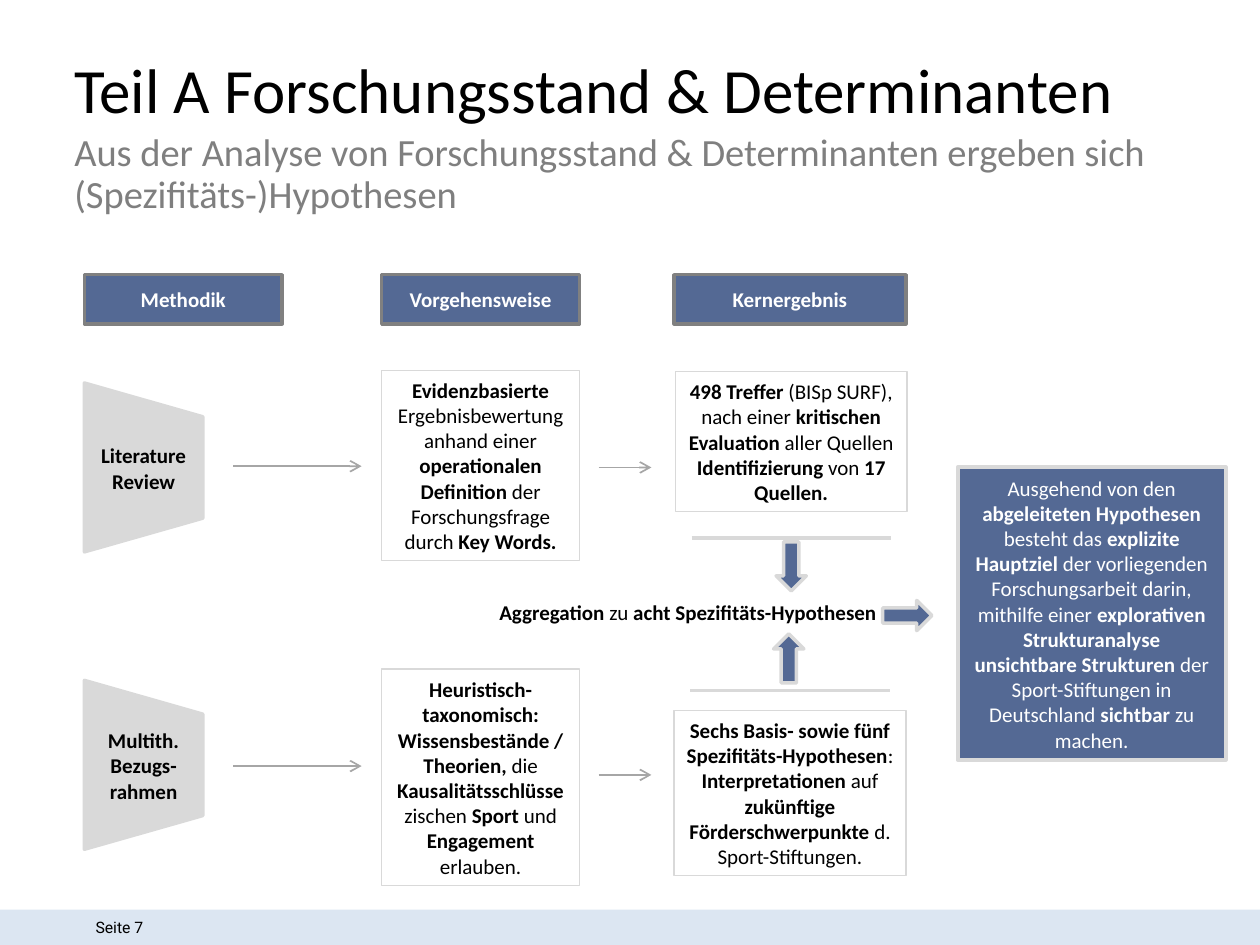
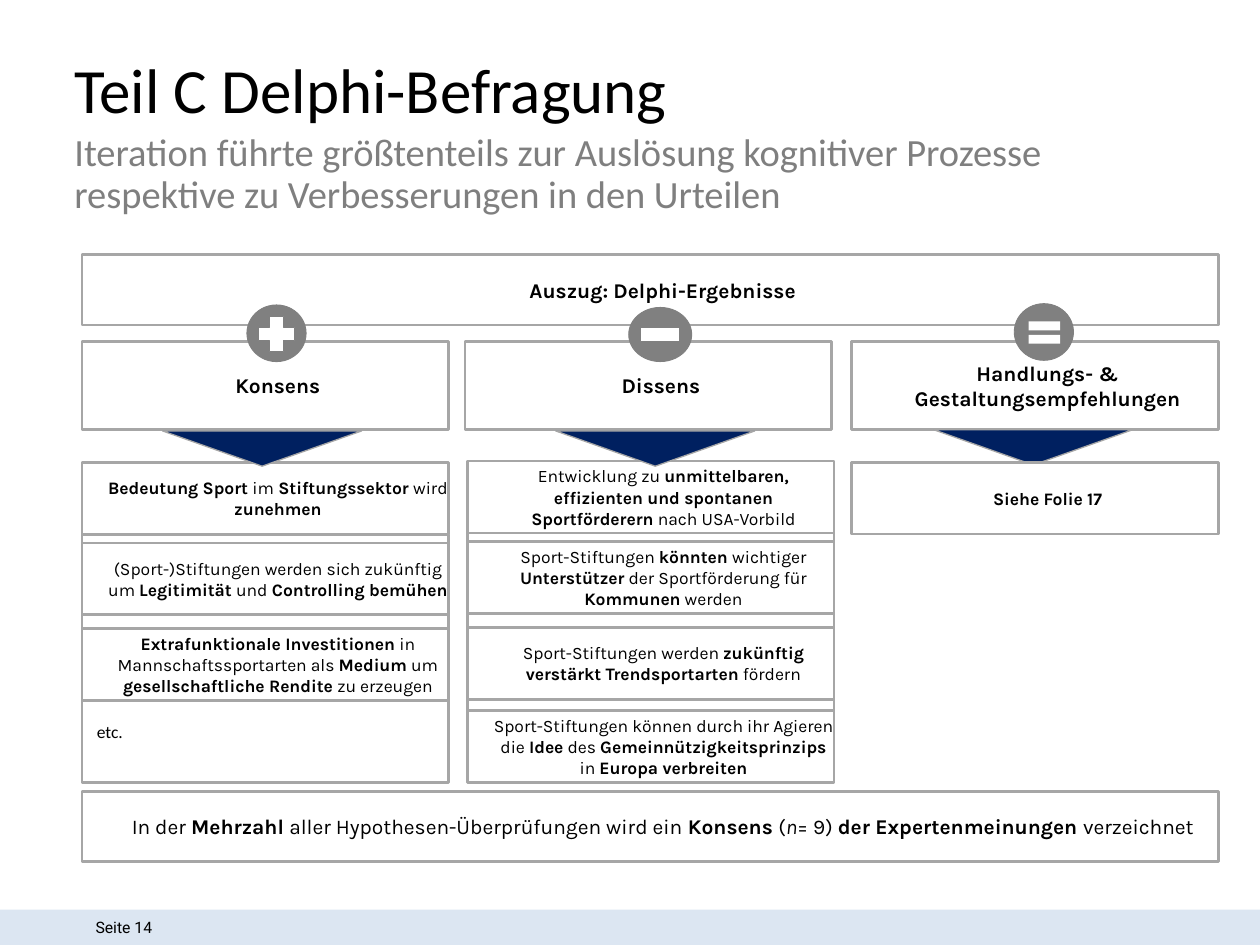
"""Build two slides on research hypotheses and Delphi survey results."""
from lxml.etree import SubElement
from pptx import Presentation
from pptx.dml.color import RGBColor
from pptx.enum.shapes import MSO_CONNECTOR, MSO_SHAPE
from pptx.enum.text import MSO_ANCHOR, MSO_AUTO_SIZE, PP_ALIGN
from pptx.oxml.ns import qn
from pptx.util import Inches, Pt

COLORS = {
    "black": "000000", "white": "FFFFFF", "navy": "002060", "band": "DCE6F2",
    "subtitle": "7F7F7F", "icon": "808080", "border": "A6A6A6", "light": "D9D9D9",
}
COL_W, ROW_H = 2.91, 0.57
ROW_TOPS = (3.67, 4.31, 4.99, 5.65)


def rgb(name):
    return RGBColor.from_string(COLORS[name])


def style_run(r, size, font, color, bold=False, italic=False):
    r.font.size, r.font.name = Pt(size), font
    r.font.color.rgb = rgb(color)
    r.font.bold, r.font.italic = bold, italic


def write(sp, text, size=12, font="Calibri", color="black", align=PP_ALIGN.CENTER,
          insets=(0.1, 0.05), indent=0, anchor=MSO_ANCHOR.MIDDLE):
    """Fill a shape with text where * toggles bold and _ toggles italic."""
    tf = sp.text_frame
    tf.word_wrap, tf.auto_size, tf.vertical_anchor = True, MSO_AUTO_SIZE.NONE, anchor
    tf.margin_left = tf.margin_right = Inches(insets[0])
    tf.margin_top = tf.margin_bottom = Inches(insets[1])
    for i, line in enumerate(text.split("\n")):
        p = tf.add_paragraph() if i else tf.paragraphs[0]
        p.alignment = align
        if indent:
            pPr = p._p.get_or_add_pPr()
            pPr.set("marL", str(Inches(indent)))
            pPr.set("indent", "0")
        for b, bold_part in enumerate(line.split("*")):
            for k, part in enumerate(bold_part.split("_")):
                if part:
                    r = p.add_run()
                    r.text = part
                    style_run(r, size, font, color, b % 2 == 1, k % 2 == 1)


def add_shape(s, kind, x, y, w, h, fill=None, line=None, width=1, alpha=None, rot=0):
    sp = s.shapes.add_shape(kind, Inches(x), Inches(y), Inches(w), Inches(h))
    sp.shadow.inherit = False
    sp.rotation = rot
    if fill:
        sp.fill.solid()
        sp.fill.fore_color.rgb = rgb(fill)
    else:
        sp.fill.background()
    if alpha:
        clr = sp._element.spPr.find(qn("a:solidFill"))[0]
        SubElement(clr, qn("a:alpha"), val=str(alpha * 1000))
    if line:
        sp.line.color.rgb = rgb(line)
        sp.line.width = Pt(width)
    else:
        sp.line.fill.background()
    return sp


def add_label(s, x, y, w, h, text, **fmt):
    write(s.shapes.add_textbox(Inches(x), Inches(y), Inches(w), Inches(h)), text, **fmt)


def add_navy(s, x, y, w, h, line, width=2, kind=MSO_SHAPE.RECTANGLE, rot=0):
    return add_shape(s, kind, x, y, w, h, "navy", line, width, 67, rot)


def add_line(s, x1, x2, y, color, width, arrow=False):
    c = s.shapes.add_connector(MSO_CONNECTOR.STRAIGHT, Inches(x1), Inches(y), Inches(x2), Inches(y))
    c.line.color.rgb = rgb(color)
    c.line.width = Pt(width)
    spPr = c._element.spPr
    if arrow:
        SubElement(spPr.find(qn("a:ln")), qn("a:tailEnd"), type="arrow")
    SubElement(spPr, qn("a:effectLst"))


def add_card(s, x, y, w, h, text="", size=10):
    sp = add_shape(s, MSO_SHAPE.RECTANGLE, x, y, w, h, "white", "border", 1.5)
    if text:
        write(sp, text, size, "Karla", insets=(0, 0), indent=0.2)


def set_heading(sp, y, w, h, text, size, color):
    sp.left, sp.top, sp.width, sp.height = Inches(0.59), Inches(y), Inches(w), Inches(h)
    p = sp.text_frame.paragraphs[0]
    pPr = p._p.get_or_add_pPr()
    pPr.set("marL", "0")
    pPr.set("indent", "0")
    SubElement(pPr, qn("a:buNone"))
    p.line_spacing, p.space_before = 0.9, Pt(0)
    write(sp, text, size, color=color, align=PP_ALIGN.LEFT, insets=(0, 0), anchor=MSO_ANCHOR.TOP)


def new_slide(prs, title, subtitle, number):
    s = prs.slides.add_slide(prs.slide_layouts[1])
    add_shape(s, MSO_SHAPE.RECTANGLE, 0, 7.22, 10, 0.28, "band")
    add_label(s, 0.66, 7.24, 2.05, 0.24, f"Seite {number}", size=9, font="Roboto", align=PP_ALIGN.LEFT)
    set_heading(s.shapes.title, 0.47, 8.9, 0.59, title, 36, "black")
    set_heading(s.placeholders[1], 1.06, 8.74, 0.59, subtitle, 22, "subtitle")
    return s


def build_hypotheses(prs):
    s = new_slide(prs, "Teil A Forschungsstand & Determinanten",
                  "Aus der Analyse von Forschungsstand & Determinanten ergeben sich "
                  "(Spezifitäts-)Hypothesen", 7)
    for x, w, text in ((0.67, 1.57, "Methodik"), (3.03, 1.57, "Vorgehensweise"),
                       (5.35, 1.84, "Kernergebnis")):
        write(add_navy(s, x, 2.18, w, 0.39, "icon"), f"*{text}*", color="white")
    for y, text in ((3.24, "*Literature*\n*Review*"), (5.6, "*Multith.*\n*Bezugs-rahmen*")):
        add_shape(s, MSO_SHAPE.FLOWCHART_MANUAL_OPERATION, 0.47, y, 1.34, 0.94,
                  "light", "light", 2, rot=270)
        add_label(s, 0.67, y + 0.12, 0.94, 0.71, text)
    for x, y, w, h, text in (
        (3.03, 2.94, 1.57, 1.51, "*Evidenzbasierte* Ergebnisbewertung anhand einer *operationalen "
                                 "Definition* der Forschungsfrage durch *Key Words.*"),
        (5.36, 2.95, 1.84, 1.11, "*498 Treffer *(BISp SURF), nach einer *kritischen Evaluation *aller "
                                 "Quellen *Identifizierung *von* 17 Quellen.*"),
        (3.03, 5.31, 1.57, 1.72, "*Heuristisch-taxonomisch: Wissensbestände / Theorien, *die* "
                                 "Kausalitätsschlüsse *zischen* Sport *und* Engagement *erlauben."),
        (5.35, 5.64, 1.84, 1.31, "*Sechs Basis- sowie fünf Spezifitäts-Hypothesen*:\n*Interpretationen *auf* "
                                 "zukünftige Förderschwerpunkte *d. Sport-Stiftungen."),
    ):
        write(add_shape(s, MSO_SHAPE.RECTANGLE, x, y, w, h, line="light", width=0.75), text)
    for x, y in ((5.49, 4.27), (5.48, 5.48)):
        add_line(s, x, x + 1.58, y, "light", 2.25)
    add_label(s, 3.82, 4.71, 3.28, 0.3, "*Aggregation *zu* acht Spezifitäts-Hypothesen*")
    for x, y, rot in ((6.16, 4.3, 0), (6.14, 5.03, 180), (7.08, 4.69, 270)):
        add_navy(s, x, y, 0.24, 0.39, "light", kind=MSO_SHAPE.DOWN_ARROW, rot=rot)
    write(add_navy(s, 7.6, 3.71, 2.13, 2.32, "light", 2.25),
          "Ausgehend von den *abgeleiteten Hypothesen *besteht das *explizite Hauptziel *der vorliegenden "
          "Forschungsarbeit darin, mithilfe einer *explorativen Strukturanalyse unsichtbare Strukturen *der "
          "Sport-Stiftungen in Deutschland* sichtbar *zu machen.", color="white")
    for x1, x2, y in ((1.85, 2.87, 3.7), (1.85, 2.87, 6.08), (4.75, 5.17, 3.71), (4.75, 5.17, 6.15)):
        add_line(s, x1, x2, y, "border", 1, arrow=True)


def add_icons(s):
    for x, y, w, h in ((1.96, 2.42, 0.47, 0.45), (4.99, 2.44, 0.5, 0.43), (8.05, 2.41, 0.47, 0.45)):
        add_shape(s, MSO_SHAPE.OVAL, x, y, w, h, "icon", "icon", 0.5)
    plus = add_shape(s, MSO_SHAPE.CROSS, 2.05, 2.51, 0.29, 0.28, "white", "icon", 0.5)
    plus.adjustments[0] = 0.31
    add_shape(s, MSO_SHAPE.RECTANGLE, 5.08, 2.6, 0.31, 0.11, "white", "icon", 0.5)
    add_shape(s, MSO_SHAPE.MATH_EQUAL, 8.12, 2.49, 0.34, 0.3, "white")


def build_delphi(prs):
    s = new_slide(prs, "Teil C Delphi-Befragung",
                  "Iteration führte größtenteils zur Auslösung kognitiver Prozesse "
                  "respektive zu Verbesserungen in den Urteilen", 14)
    add_card(s, 0.65, 2.02, 9.02, 0.56, "*Auszug: Delphi-Ergebnisse*", 12)
    for x, text in ((0.65, "Konsens"), (3.69, "Dissens"), (6.76, "Handlungs- & Gestaltungsempfehlungen")):
        add_card(s, x, 2.71, COL_W, 0.7, f"*{text}*", 12)
    add_icons(s)
    consensus = (
        "*Bedeutung Sport *im* Stiftungssektor *wird *zunehmen*",
        "(Sport-)Stiftungen werden sich zukünftig um *Legitimität *und* Controlling bemühen*",
        "*Extrafunktionale Investitionen *in Mannschaftssportarten als *Medium* um "
        "*gesellschaftliche Rendite *zu erzeugen",
    )
    dissent = (
        "Entwicklung zu *unmittelbaren, effizienten und spontanen Sportförderern *nach USA-Vorbild",
        "Sport-Stiftungen *könnten *wichtiger *Unterstützer* der Sportförderung für *Kommunen* werden",
        "Sport-Stiftungen werden *zukünftig verstärkt Trendsportarten *fördern",
        "Sport-Stiftungen können durch ihr Agieren die *Idee* des *Gemeinnützigkeitsprinzips* in "
        "*Europa verbreiten*",
    )
    for x, shift, frame_h, texts in ((0.65, 0, 1.97, consensus), (3.71, -0.01, 1.8, dissent)):
        add_card(s, x, ROW_TOPS[0] + ROW_H + shift, COL_W, frame_h)
        for top, text in zip(ROW_TOPS, texts):
            add_card(s, x, top + shift, COL_W, ROW_H, text)
    add_label(s, 0.67, 5.67, 2.52, 0.27, "etc.", size=10, align=PP_ALIGN.LEFT)
    for x, y in ((1.29, 3.42), (4.41, 3.42), (7.41, 3.41)):
        add_shape(s, MSO_SHAPE.ISOSCELES_TRIANGLE, x, y, 1.58, 0.28, "navy", "border", 0.75, rot=180)
    add_card(s, 6.76, ROW_TOPS[0], COL_W, ROW_H, "*Siehe Folie 17*")
    add_card(s, 0.65, 6.28, 9.02, 0.56,
             "In der *Mehrzahl *aller Hypothesen-Überprüfungen wird ein *Konsens *(_n_= 9) "
             "*der Expertenmeinungen *verzeichnet", 12)


def main():
    prs = Presentation()
    prs.slide_width, prs.slide_height = Inches(10), Inches(7.5)
    build_hypotheses(prs)
    build_delphi(prs)
    prs.save("out.pptx")


if __name__ == "__main__":
    main()
